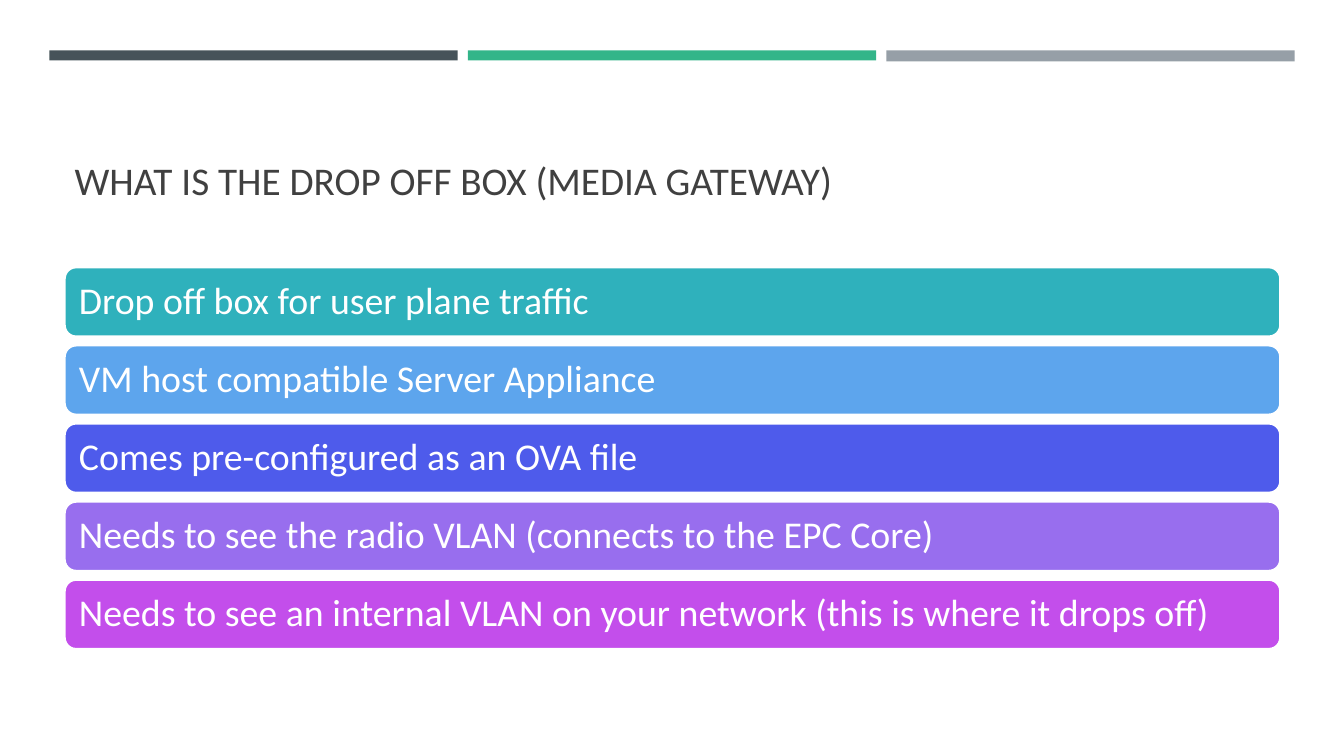
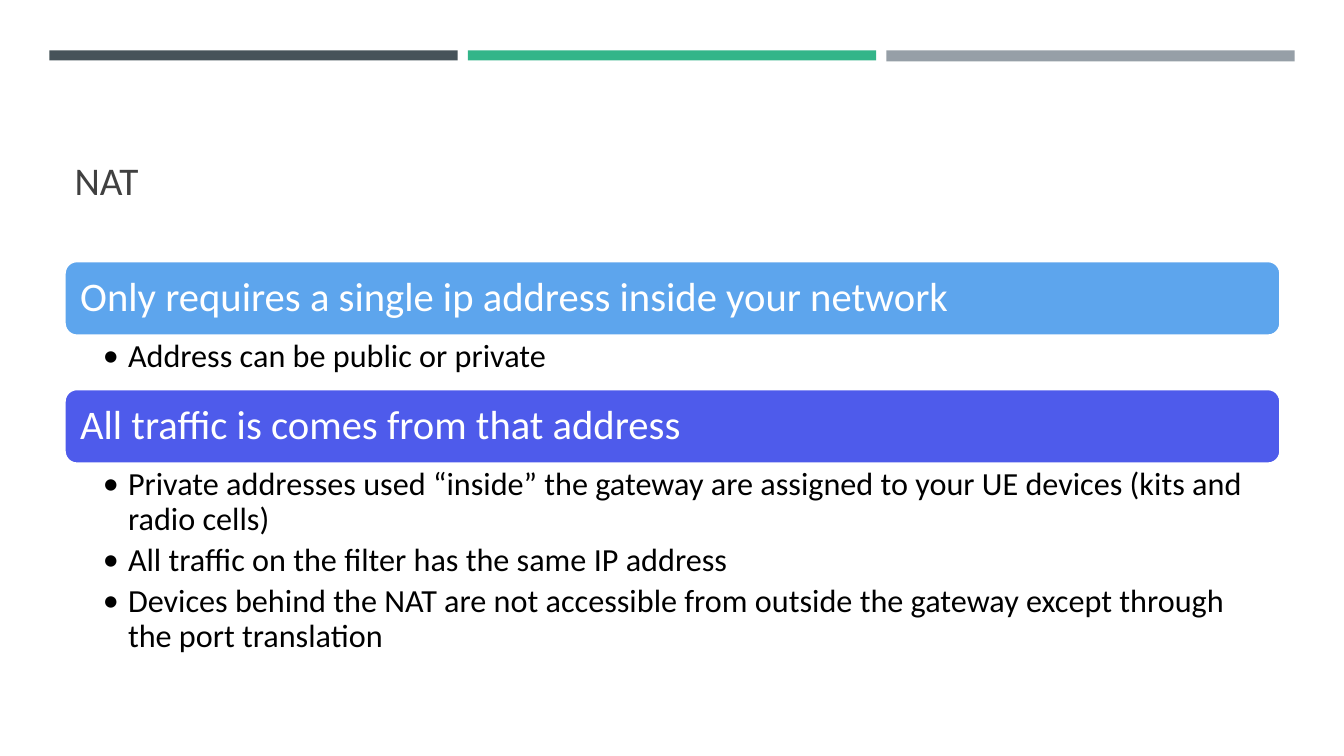
import dataclasses
from typing import Any

import pptx
import pptx.dml.color
import pptx.enum.shapes
import pptx.enum.text
import pptx.oxml.ns
import pptx.util
from lxml import etree

Inches = pptx.util.Inches
Pt = pptx.util.Pt
Anchor = pptx.enum.text.MSO_ANCHOR
Align = pptx.enum.text.PP_ALIGN

FONT = "Calibri"
TEAL, SKY, INDIGO, VIOLET, MAGENTA = "2FB1BC", "5DA5ED", "4E5BEB", "986EEE", "C34EEB"
WHITE, BLACK, TITLE_GREY = "FFFFFF", "000000", "404040"

# Shared column for titles, boxes and bullets
CONTENT_LEFT, CONTENT_WIDTH = 0.64, 12.06
TITLE_TOP, TITLE_HEIGHT = 0.77, 1.3

# Bands across the top: colour and height
BAND_LEFT, BAND_TOP, BAND_WIDTH, BAND_GAP = 0.49, 0.5, 4.05, 0.1
BANDS = (("465359", 0.1), ("33B589", 0.1), ("969FA7", 0.11))


@dataclasses.dataclass(frozen=True)
class Box:
    text: str
    fill: str
    top: float
    height: float
    size: int
    inset: float


@dataclasses.dataclass(frozen=True)
class BulletList:
    items: tuple[str, ...]
    top: float
    height: float


def set_attributes(target: Any, values: dict[str, Any]) -> None:
    for name, value in values.items():
        setattr(target, name, value)


def colour(hex_value: str) -> pptx.dml.color.RGBColor:
    return pptx.dml.color.RGBColor.from_string(hex_value)


def style_frame(frame: Any, anchor: Any, left: float, top: float,
                right: float, bottom: float) -> None:
    set_attributes(frame, {
        "word_wrap": True,
        "auto_size": pptx.enum.text.MSO_AUTO_SIZE.NONE,
        "vertical_anchor": anchor,
        "margin_left": Inches(left), "margin_top": Inches(top),
        "margin_right": Inches(right), "margin_bottom": Inches(bottom),
    })


def write(para: Any, text: str, size: int, hex_value: str,
          para_format: dict[str, Any]) -> None:
    set_attributes(para, {"alignment": Align.LEFT, **para_format})
    span = para.add_run()
    span.text = text
    set_attributes(span.font, {"name": FONT, "size": Pt(size)})
    span.font.color.rgb = colour(hex_value)


def add_filled_shape(page: Any, kind: Any, left: float, top: float,
                     width: float, height: float, fill: str) -> Any:
    shape = page.shapes.add_shape(
        kind, Inches(left), Inches(top), Inches(width), Inches(height))
    shape.shadow.inherit = False
    shape.fill.solid()
    shape.fill.fore_color.rgb = colour(fill)
    shape.line.fill.background()
    return shape


def add_page(deck: Any, title_text: str) -> Any:
    """Add a title-only page with its top bands and title."""
    page = deck.slides.add_slide(deck.slide_layouts[5])
    for index, (fill, height) in enumerate(BANDS):
        left = BAND_LEFT + index * (BAND_WIDTH + BAND_GAP)
        add_filled_shape(page, pptx.enum.shapes.MSO_SHAPE.RECTANGLE,
                         left, BAND_TOP, BAND_WIDTH, height, fill)
    title = page.shapes.title
    set_attributes(title, {
        "left": Inches(CONTENT_LEFT), "top": Inches(TITLE_TOP),
        "width": Inches(CONTENT_WIDTH), "height": Inches(TITLE_HEIGHT),
    })
    style_frame(title.text_frame, Anchor.BOTTOM, 0.1, 0.05, 0.1, 0.05)
    write(title.text_frame.paragraphs[0], title_text, 28, TITLE_GREY, {})
    return page


def add_box(page: Any, box: Box) -> None:
    shape = add_filled_shape(
        page, pptx.enum.shapes.MSO_SHAPE.ROUNDED_RECTANGLE,
        CONTENT_LEFT, box.top, CONTENT_WIDTH, box.height, box.fill)
    shape.line.color.rgb = colour(WHITE)
    shape.line.width = Pt(1.75)
    style_frame(shape.text_frame, Anchor.MIDDLE, *[box.inset] * 4)
    write(shape.text_frame.paragraphs[0], box.text, box.size, WHITE,
          {"line_spacing": 0.9})


def add_bullets(page: Any, bullets: BulletList) -> None:
    area = page.shapes.add_textbox(
        Inches(CONTENT_LEFT), Inches(bullets.top),
        Inches(CONTENT_WIDTH), Inches(bullets.height))
    frame = area.text_frame
    style_frame(frame, Anchor.TOP, 0.38, 0.04, 0.23, 0.04)
    for index, item in enumerate(bullets.items):
        para = frame.add_paragraph() if index else frame.paragraphs[0]
        write(para, item, 23, BLACK,
              {"level": 1, "line_spacing": 0.9, "space_after": Pt(4.5)})
        # Hanging bullet
        properties = para._p.get_or_add_pPr()
        properties.set("marL", str(Inches(0.25)))
        properties.set("indent", str(-Inches(0.25)))
        for tag, name, value in (("a:buFont", "typeface", FONT),
                                 ("a:buChar", "char", "•")):
            etree.SubElement(properties, pptx.oxml.ns.qn(tag)).set(name, value)


def build_drop_off_page(deck: Any) -> None:
    page = add_page(deck, "WHAT IS THE DROP OFF BOX (MEDIA GATEWAY)")
    rows = (
        ("Drop off box for user plane traffic", TEAL),
        ("VM host compatible Server Appliance", SKY),
        ("Comes pre-configured as an OVA file", INDIGO),
        ("Needs to see the radio VLAN (connects to the EPC Core)", VIOLET),
        ("Needs to see an internal VLAN on your network "
         "(this is where it drops off)", MAGENTA),
    )
    first_top, last_top = 2.65, 5.75
    pitch = (last_top - first_top) / (len(rows) - 1)
    for index, (text, fill) in enumerate(rows):
        add_box(page, Box(text, fill, first_top + index * pitch, 0.69, 27, 0.11))


def build_nat_page(deck: Any) -> None:
    page = add_page(deck, "NAT")
    sections = (
        ("Only requires a single ip address inside your network", SKY, 0.53,
         ("Address can be public or private",)),
        ("All traffic is comes from that address", INDIGO, 1.9,
         ("Private addresses used “inside” the gateway are assigned to your "
          "UE devices (kits and radio cells)",
          "All traffic on the filter has the same IP address",
          "Devices behind the NAT are not accessible from outside the gateway "
          "except through the port translation")),
    )
    # Each heading sits directly on its bullets, and sections stack
    top, heading_height = 2.59, 0.74
    for heading, fill, list_height, items in sections:
        add_box(page, Box(heading, fill, top, heading_height, 29, 0.12))
        top += heading_height
        add_bullets(page, BulletList(items, top, list_height))
        top += list_height


def main() -> None:
    deck = pptx.Presentation()
    set_attributes(deck, {"slide_width": Inches(13.33), "slide_height": Inches(7.5)})
    build_drop_off_page(deck)
    build_nat_page(deck)
    deck.save("out.pptx")


if __name__ == "__main__":
    main()
